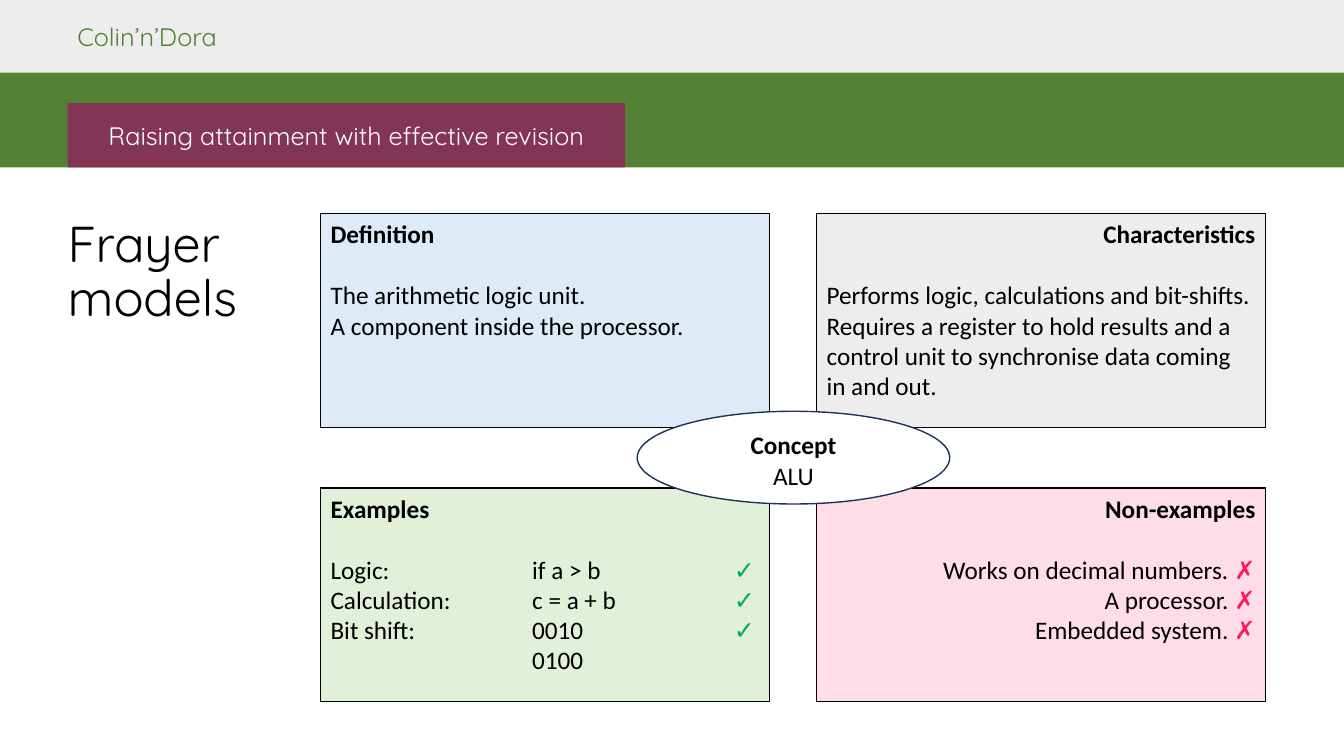
from lxml.etree import SubElement
from pptx import Presentation
from pptx.dml.color import RGBColor as RGB
from pptx.enum.shapes import MSO_SHAPE as Shape
from pptx.enum.text import MSO_ANCHOR as Anchor, MSO_AUTO_SIZE as Fit, PP_ALIGN as Align
from pptx.oxml.ns import qn
from pptx.util import Inches, Pt

BLACK = RGB(0x00, 0x00, 0x00)
WHITE = RGB(0xFF, 0xFF, 0xFF)
GREY = RGB(0xED, 0xED, 0xED)
GREEN = RGB(0x54, 0x82, 0x35)
PLUM = RGB(0x82, 0x35, 0x54)
NAVY = RGB(0x1E, 0x32, 0x56)
BLUE = RGB(0xDE, 0xEB, 0xF7)
MINT = RGB(0xE2, 0xF0, 0xD9)
PINK = RGB(0xFF, 0xDD, 0xE7)
MARKS = {"✓": RGB(0x00, 0xB0, 0x50), "✗": RGB(0xFC, 0x1C, 0x5C)}

deck = Presentation()
deck.slide_width, deck.slide_height = Inches(13.33), Inches(7.5)
slide = deck.slides.add_slide(deck.slide_layouts[5])


def add_box(kind, left, top, width, height, fill, line=None):
    box = slide.shapes.add_shape(kind, Inches(left), Inches(top), Inches(width), Inches(height))
    box.shadow.inherit = False
    box.fill.solid()
    box.fill.fore_color.rgb = fill
    if line is None:
        box.line.fill.background()
    else:
        box.line.color.rgb = line
        box.line.width = Pt(1)
    box.text_frame.word_wrap = True
    box.text_frame.vertical_anchor = Anchor.TOP
    return box


def add_run(para, text, color=BLACK, face="Calibri", size=18, bold=False):
    run = para.add_run()
    run.text = text
    run.font.name = face
    run.font.size = Pt(size)
    run.font.bold = bold
    run.font.color.rgb = color


add_box(Shape.RECTANGLE, 0, 0, 13.33, 0.72, GREY)
add_box(Shape.RECTANGLE, 0, 0.72, 13.33, 0.94, GREEN)

brand = slide.shapes.add_textbox(Inches(0.67), Inches(0.16), Inches(1.87), Inches(0.4))
brand.text_frame.word_wrap = False
add_run(brand.text_frame.paragraphs[0], "Colin’n’Dora", GREEN, "Quicksand")

title = slide.shapes.title
title.left, title.top = Inches(0.57), Inches(2.12)
title.width, title.height = Inches(2.08), Inches(1.96)
frame = title.text_frame
frame.word_wrap = True
frame.auto_size = Fit.NONE
frame.vertical_anchor = Anchor.TOP
para = frame.paragraphs[0]
para.alignment = Align.LEFT
para.line_spacing = 0.9
add_run(para, "Frayer models", BLACK, "Quicksand", 36)

cards = [
    ("Definition", BLUE, Align.LEFT, [
        ("The arithmetic logic unit.", ""),
        ("A component inside the processor.", "")]),
    ("Characteristics", GREY, Align.LEFT, [
        ("Performs logic, calculations and bit-shifts.", ""),
        ("Requires a register to hold results and a control unit to "
         "synchronise data coming in and out.", "")]),
    ("Examples", MINT, Align.LEFT, [
        ("Logic:\tif a > b\t", "✓"),
        ("Calculation:\tc = a + b\t", "✓"),
        ("Bit shift:\t0010\t", "✓"),
        ("\t0100", "")]),
    ("Non-examples", PINK, Align.RIGHT, [
        ("Works on decimal numbers. ", "✗"),
        ("A processor. ", "✗"),
        ("Embedded system. ", "✗")]),
]
for i, (head, fill, align, rows) in enumerate(cards):
    row, col = divmod(i, 2)
    card = add_box(Shape.RECTANGLE, 3.18 + 4.92 * col, 2.12 + 2.72 * row, 4.45, 2.12, fill, BLACK)
    para = card.text_frame.paragraphs[0]
    para.alignment = Align.RIGHT if col else Align.LEFT
    add_run(para, head, bold=True)
    for j, (text, mark) in enumerate(rows):
        para = card.text_frame.add_paragraph()
        para.alignment = align
        if j == 0:
            para.space_before = Pt(22)
        if "\t" in text:
            tabs = SubElement(para._p.get_or_add_pPr(), qn("a:tabLst"))
            for stop in (2, 4):
                SubElement(tabs, qn("a:tab"), pos=str(Inches(stop)), algn="l")
        add_run(para, text)
        if mark:
            add_run(para, mark, MARKS[mark])

hub = add_box(Shape.OVAL, 6.32, 4.08, 3.1, 0.92, WHITE, NAVY)
para = hub.text_frame.paragraphs[0]
para.alignment = Align.CENTER
add_run(para, "Concept", bold=True)
para = hub.text_frame.add_paragraph()
para.alignment = Align.CENTER
add_run(para, "ALU")

banner = add_box(Shape.RECTANGLE, 0.67, 1.02, 5.53, 0.64, PLUM)
banner.text_frame.vertical_anchor = Anchor.MIDDLE
para = banner.text_frame.paragraphs[0]
para.alignment = Align.CENTER
add_run(para, "Raising attainment with effective revision", WHITE, "Quicksand")

deck.save("out.pptx")
